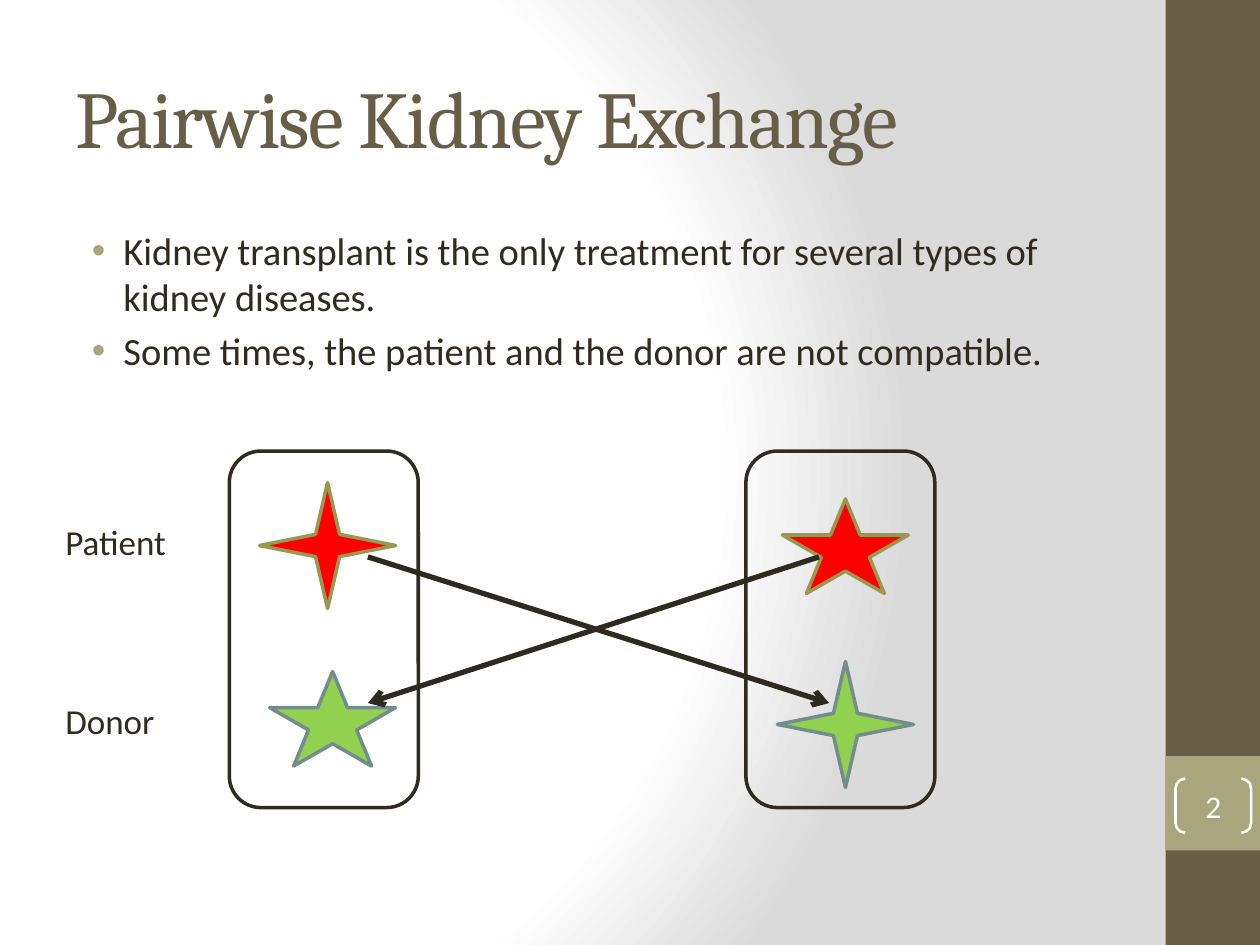
from pptx import Presentation
from pptx.dml.color import RGBColor
from pptx.enum.shapes import MSO_CONNECTOR, MSO_SHAPE
from pptx.enum.text import MSO_ANCHOR, MSO_AUTO_SIZE, PP_ALIGN
from pptx.oxml import parse_xml
from pptx.oxml.ns import nsdecls, qn
from pptx.util import Inches, Pt

TITLE = "Pairwise Kidney Exchange"
BULLETS = [
    "Kidney transplant is the only treatment for several types of kidney diseases.",
    "Some times, the patient and the donor are not compatible.",
]
PAGE_NUMBER = "2"

BROWN, TAN, INK, WHITE = "675E47", "A9A57C", "2F2B20", "FFFFFF"
ARROW_INK = "2E2A1F"
PATIENT = {"fill": "FF0000", "line": "9B9650"}
DONOR = {"fill": "92D050", "line": "738D8C"}
BACKGROUND_STOPS = [(0, WHITE), (75, WHITE), (100, "DADADA")]

# left, top, width, height
SIDEBAR = [((9.25, 0, 0.75, 7.5), BROWN), ((9.25, 6, 0.75, 0.75), TAN)]
ROLES = [("Patient", (0.42, 4.08, 1.17, 0.44)), ("Donor", (0.42, 5.5, 1, 0.44))]
PAIR_LEFTS = [1.82, 5.92]
PAIR_TOP, PAIR_WIDTH, PAIR_HEIGHT = 3.58, 1.5, 2.83
STAR_SIZES = {MSO_SHAPE.STAR_4_POINT: (1.08, 1), MSO_SHAPE.STAR_5_POINT: (1, 0.75)}
STARS = [
    (MSO_SHAPE.STAR_4_POINT, (2.06, 3.83), PATIENT),
    (MSO_SHAPE.STAR_5_POINT, (2.14, 5.33), DONOR),
    (MSO_SHAPE.STAR_4_POINT, (6.17, 5.25), DONOR),
    (MSO_SHAPE.STAR_5_POINT, (6.21, 3.96), PATIENT),
]
PATIENT_Y, DONOR_Y = 4.42, 5.58
EXCHANGES = [(2.92, 6.58), (6.5, 2.92)]


def color(hex_string):
    return RGBColor.from_string(hex_string)


def place(shape, box):
    shape.left, shape.top, shape.width, shape.height = map(Inches, box)


def write(frame, *lines, size, ink=INK, font="Calibri", align=PP_ALIGN.LEFT,
          anchor=MSO_ANCHOR.TOP, margins=None, grow=False):
    frame.word_wrap = True
    frame.auto_size = MSO_AUTO_SIZE.SHAPE_TO_FIT_TEXT if grow else MSO_AUTO_SIZE.NONE
    frame.vertical_anchor = anchor
    if margins is not None:
        frame.margin_left = frame.margin_right = Inches(margins)
        frame.margin_top = frame.margin_bottom = Inches(margins)
    for i, line in enumerate(lines):
        paragraph = frame.add_paragraph() if i else frame.paragraphs[0]
        paragraph.alignment = align
        run = paragraph.add_run()
        run.text = line
        run.font.size, run.font.name = Pt(size), font
        run.font.color.rgb = color(ink)


def add_preset(slide, preset, box, fill=None, line=None, weight=2):
    shape = slide.shapes.add_shape(preset, *map(Inches, box))
    shape.shadow.inherit = False
    if fill:
        shape.fill.solid()
        shape.fill.fore_color.rgb = color(fill)
    else:
        shape.fill.background()
    if line:
        shape.line.color.rgb = color(line)
        shape.line.width = Pt(weight)
    else:
        shape.line.fill.background()
    return shape


def add_arrow(slide, start, end):
    arrow = slide.shapes.add_connector(MSO_CONNECTOR.STRAIGHT, *map(Inches, start + end))
    arrow.line.color.rgb = color(ARROW_INK)
    arrow.line.width = Pt(3)
    arrow.line._get_or_add_ln().append(
        parse_xml(f'<a:tailEnd {nsdecls("a")} type="arrow"/>'))
    arrow._element.spPr.append(parse_xml(f'<a:effectLst {nsdecls("a")}/>'))


def set_radial_background(slide):
    slide.background.fill.gradient()
    gradient = next(slide._element.iter(qn("a:gradFill")))
    stops = "".join(
        f'<a:gs pos="{pos * 1000}"><a:srgbClr val="{hue}"/></a:gs>'
        for pos, hue in BACKGROUND_STOPS)
    gradient.getparent().replace(gradient, parse_xml(
        f'<a:gradFill {nsdecls("a")} rotWithShape="1"><a:gsLst>{stops}</a:gsLst>'
        '<a:path path="circle"><a:fillToRect l="20000" t="50000" r="100000" b="50000"/>'
        '</a:path></a:gradFill>'))


def fill_placeholders(slide):
    title, body = slide.shapes.title, slide.placeholders[1]
    place(title, (0.5, 0.3, 8.33, 1.25))
    write(title.text_frame, TITLE, size=46, ink=BROWN, font="Cambria",
          anchor=MSO_ANCHOR.MIDDLE)
    title.text_frame.paragraphs[0].runs[0].font._element.set("spc", "-100")

    place(body, (0.5, 1.75, 8.33, 5.25))
    write(body.text_frame, *BULLETS, size=22)
    for paragraph in body.text_frame.paragraphs:
        properties = paragraph._p.get_or_add_pPr()
        properties.set("marL", str(Inches(0.38)))
        properties.set("indent", str(Inches(-0.25)))
        properties.append(parse_xml(
            f'<a:buClr {nsdecls("a")}><a:srgbClr val="{TAN}"/></a:buClr>'))


def main():
    deck = Presentation()
    deck.slide_width, deck.slide_height = Inches(10), Inches(7.5)
    slide = deck.slides.add_slide(deck.slide_layouts[1])
    set_radial_background(slide)
    fill_placeholders(slide)

    for box, fill in SIDEBAR:
        add_preset(slide, MSO_SHAPE.RECTANGLE, box, fill=fill)
    bracket = add_preset(slide, MSO_SHAPE.DOUBLE_BRACKET, (9.33, 6.18, 0.6, 0.43),
                         line=WHITE, weight=1.5)
    bracket.adjustments[0] = 0.18
    write(bracket.text_frame, PAGE_NUMBER, size=18, ink=WHITE, align=PP_ALIGN.CENTER,
          anchor=MSO_ANCHOR.MIDDLE, margins=0)

    for preset, corner, colors in STARS:
        add_preset(slide, preset, corner + STAR_SIZES[preset], **colors)
    for left in PAIR_LEFTS:
        add_preset(slide, MSO_SHAPE.ROUNDED_RECTANGLE,
                   (left, PAIR_TOP, PAIR_WIDTH, PAIR_HEIGHT), line=INK)
    for role, box in ROLES:
        label = slide.shapes.add_textbox(*map(Inches, box))
        write(label.text_frame, role, size=20, grow=True)
    for patient_x, donor_x in EXCHANGES:
        add_arrow(slide, (patient_x, PATIENT_Y), (donor_x, DONOR_Y))

    deck.save("out.pptx")


if __name__ == "__main__":
    main()
